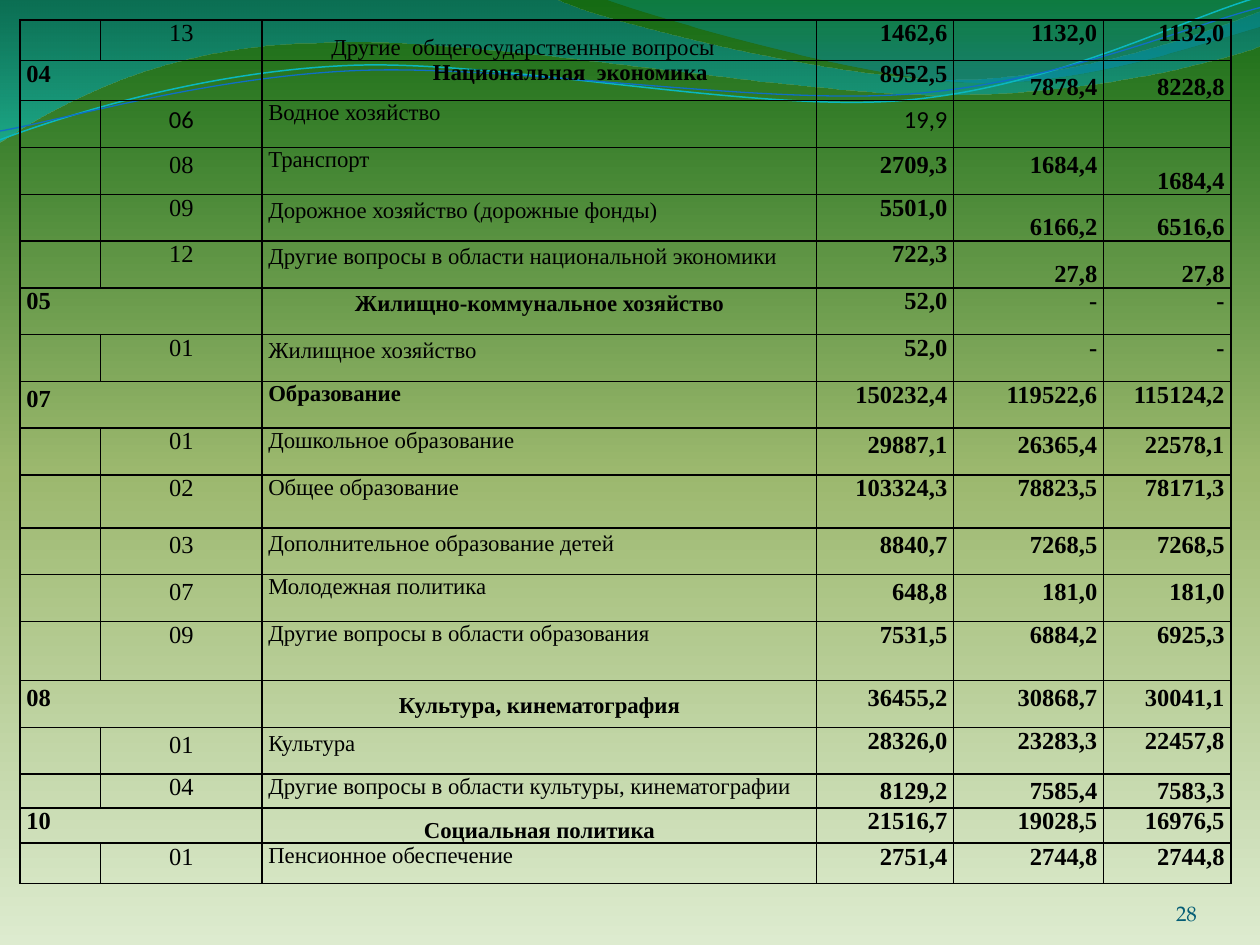
from math import cos, radians, sin

from pptx import Presentation
from pptx.dml.color import RGBColor
from pptx.enum.text import MSO_ANCHOR as ANCHOR, PP_ALIGN as ALIGN
from pptx.oxml import parse_xml
from pptx.oxml.ns import nsdecls, qn
from pptx.util import Inches, Pt

BLACK = RGBColor(0x00, 0x00, 0x00)
PAGE_BLUE = RGBColor(0x04, 0x5D, 0x75)
CYAN = RGBColor(0x0A, 0xB8, 0xBF)
BLUE = RGBColor(0x0F, 0x6F, 0xC6)
PALE_GREEN = RGBColor(0xDD, 0xEB, 0xCF)
MID_GREEN = RGBColor(0x9C, 0xB8, 0x6E)
DARK_GREEN = RGBColor(0x15, 0x6B, 0x13)
DEEP_TEAL = RGBColor(0x00, 0x74, 0xA1)
BRIGHT_TEAL = RGBColor(0x00, 0xC6, 0xCF)
SEA_TEAL = RGBColor(0x00, 0xA1, 0xA9)
SKY_TEAL = RGBColor(0x00, 0x8B, 0xBF)

COLS = [0.64, 1.28, 4.4, 1.09, 1.19, 1.01]
TALL = 2.6 / 7  # seven tall rows take 2.6 inches
ROWS = [0.32] * 2 + [TALL] * 8 + [0.42] + [TALL] * 2 + [0.47, TALL, TALL, 0.25, 0.28, 0.32]

# Paragraph styles, one letter per filled cell in the last field of a row
STYLES = {
    ".": {},
    "w": dict(line=1.15, after=10),
    "b": dict(anchor=ANCHOR.BOTTOM),
    "x": dict(line=1.15, after=10, anchor=ANCHOR.BOTTOM),
    "c": dict(line=1.5, before=6),
    "h": dict(anchor=ANCHOR.BOTTOM, align=ALIGN.LEFT, margin=0.62, indent=-0.12),
    "i": dict(indent=0.49),
}

# Section, subsection, name, three years, styles
BUDGET = [
    ("", "13", "Другие  общегосударственные вопросы", "1462,6", "1132,0", "1132,0", ".h..."),
    ("04", "", "Национальная  экономика", "8952,5", "7878,4", "8228,8", ".i.bb"),
    ("", "06", "Водное хозяйство", "19,9", "", "", "w.w.."),
    ("", "08", "Транспорт", "2709,3", "1684,4", "1684,4", "w.wwx"),
    ("", "09", "Дорожное хозяйство (дорожные фонды)", "5501,0", "6166,2", "6516,6", ".w.bb"),
    ("", "12", "Другие вопросы в области национальной экономики", "722,3", "27,8", "27,8", ".w.bb"),
    ("05", "", "Жилищно-коммунальное хозяйство", "52,0", "-", "-", ".w..."),
    ("", "01", "Жилищное хозяйство", "52,0", "-", "-", ".w..."),
    ("07", "", "Образование", "150232,4", "119522,6", "115124,2", "w...."),
    ("", "01", "Дошкольное образование", "29887,1", "26365,4", "22578,1", "..www"),
    ("", "02", "Общее образование", "103324,3", "78823,5", "78171,3", "....."),
    ("", "03", "Дополнительное образование детей", "8840,7", "7268,5", "7268,5", "wwwww"),
    ("", "07", "Молодежная политика", "648,8", "181,0", "181,0", "w.www"),
    ("", "09", "Другие вопросы в области образования", "7531,5", "6884,2", "6925,3", "....."),
    ("08", "", "Культура, кинематография", "36455,2", "30868,7", "30041,1", "wcwww"),
    ("", "01", "Культура", "28326,0", "23283,3", "22457,8", "ww..."),
    ("", "04", "Другие вопросы в области культуры, кинематографии", "8129,2", "7585,4", "7583,3", "..www"),
    ("10", "", "Социальная политика", "21516,7", "19028,5", "16976,5", ".b..."),
    ("", "01", "Пенсионное обеспечение", "2751,4", "2744,8", "2744,8", "....."),
]

# Waves: a point is a straight step, six numbers are a Bezier step
BAND = [(0, -0.01), (4.4, -0.01), (4.76, 0.17, 6.64, 0.63, 7.58, 0.63),
        (8.53, 0.63, 9.58, 0.26, 10, 0.09), (10.01, 0.36),
        (9.83, 0.44, 8.7, 0.76, 7.46, 0.75), (6.22, 0.75, 3.82, 0.28, 2.57, 0.34),
        (1.29, 0.35, 0.46, 0.83, -0.01, 1.13), (0, -0.01)]
CREST = [(4.79, -0.01), (5.09, 0.11, 6.82, 0.62, 7.69, 0.65),
         (8.56, 0.69, 9.61, 0.32, 10, 0.21), (10, 0), (4.79, -0.01)]
CYAN_CURVE = [(0, 1.11), (0.48, 0.93, 1.58, 0.57, 2.77, 0.52),
              (3.95, 0.47, 5.93, 0.89, 7.13, 0.8), (8.33, 0.71, 9.38, 0.15, 9.98, -0.02)]
BLUE_CURVE = [(0, 1.04), (0.47, 0.96, 1.64, 0.61, 2.83, 0.56),
              (4.03, 0.51, 5.97, 0.83, 7.17, 0.75), (8.36, 0.67, 9.41, 0.21, 10, 0.06)]
TILT = 2.7  # degrees the thin curves lean anticlockwise


def write(tf, text, font="Times New Roman", size=14, bold=False, color=BLACK, align=ALIGN.LEFT,
          line=None, before=0, after=0, margin=0, indent=0):
    p = tf.paragraphs[0]
    p.alignment = align
    p.line_spacing = line
    p.space_before, p.space_after = Pt(before), Pt(after)
    pPr = p._p.get_or_add_pPr()
    pPr.set("marL", str(Inches(margin)))
    pPr.set("indent", str(Inches(indent)))
    r = p.add_run()
    r.text = text
    r.font.name, r.font.size, r.font.bold = font, Pt(size), bold
    r.font.color.rgb = color


def set_gradient(fill, owner, stops, angle):
    """Stops are (position %, colour, opacity %); the angle runs clockwise."""
    fill.gradient()
    grad = owner.find(".//" + qn("a:gradFill"))
    gs_list = grad.find(qn("a:gsLst"))
    for gs in list(gs_list):
        gs_list.remove(gs)
    for pos, color, opacity in stops:
        alpha = f'<a:alpha val="{opacity * 1000}"/>' if opacity < 100 else ""
        gs_list.append(parse_xml(
            f'<a:gs {nsdecls("a")} pos="{pos * 1000}"><a:srgbClr val="{color}">'
            f'{alpha}</a:srgbClr></a:gs>'))
    grad.find(qn("a:lin")).set("ang", str(angle * 60000))


class Page:
    """Current slide; lengths are in columns and rows of a one-inch grid."""

    def __init__(self, prs):
        self.slide = prs.slides.add_slide(prs.slide_layouts[6])
        self.shapes = self.slide.shapes

    def background(self, stops, angle):
        set_gradient(self.slide.background.fill, self.slide.element, stops, angle)

    def wave(self, box, steps, stops=None, line=None, width=0.75, tilt=0):
        left, top, w, h = box
        turn = radians(tilt)

        def local(x, y):
            """Point in the frame of the box before it is tilted."""
            dx, dy = x - left - w / 2, y - top - h / 2
            return (Inches(w / 2 + dx * cos(turn) - dy * sin(turn)),
                    Inches(h / 2 + dx * sin(turn) + dy * cos(turn)))

        builder = self.shapes.build_freeform(0, 0)
        builder.add_line_segments([(Inches(w), Inches(h))], close=bool(stops))
        sp = builder.convert_to_shape()
        sp.left, sp.top, sp.width, sp.height = (Inches(v) for v in box)
        sp.rotation = -tilt

        # Swap the straight outline for the Bezier one
        outline = sp.element.find(".//" + qn("a:path"))
        for old in outline.findall(qn("a:moveTo")) + outline.findall(qn("a:lnTo")):
            outline.remove(old)
        for i, step in enumerate(steps):
            tag = "moveTo" if i == 0 else "lnTo" if len(step) == 2 else "cubicBezTo"
            points = [local(*step[k:k + 2]) for k in range(0, len(step), 2)]
            pts = "".join(f'<a:pt x="{x}" y="{y}"/>' for x, y in points)
            outline.insert(i, parse_xml(f'<a:{tag} {nsdecls("a")}>{pts}</a:{tag}>'))

        sp.shadow.inherit = False
        if stops:
            set_gradient(sp.fill, sp.element, stops, 90)
            sp.line.fill.background()
        else:
            sp.fill.background()
            sp.line.color.rgb, sp.line.width = line, Pt(width)

    def text(self, box, text, **style):
        tf = self.shapes.add_textbox(*(Inches(v) for v in box)).text_frame
        tf.word_wrap = True
        tf.vertical_anchor = ANCHOR.BOTTOM
        tf.margin_left = tf.margin_right = tf.margin_top = tf.margin_bottom = 0
        write(tf, text, **style)

    def cell(self, cell, text, anchor=ANCHOR.TOP, **style):
        cell.margin_left = cell.margin_right = Inches(0.05)
        cell.margin_top = cell.margin_bottom = 0
        cell.vertical_anchor = anchor
        cell.fill.background()
        tcPr = cell._tc.get_or_add_tcPr()
        for i, side in enumerate("LRTB"):
            tcPr.insert(i, parse_xml(
                f'<a:ln{side} {nsdecls("a")} w="{Pt(1)}"><a:solidFill>'
                f'<a:srgbClr val="{BLACK}"/></a:solidFill></a:ln{side}>'))
        if text:
            write(cell.text_frame, text, **style)
        else:  # small type keeps an empty cell from stretching its row
            cell.text_frame.paragraphs[0]._p.append(
                parse_xml(f'<a:endParaRPr {nsdecls("a")} sz="800"/>'))

    def budget_table(self, left, top):
        table = self.shapes.add_table(len(ROWS), len(COLS), Inches(left), Inches(top),
                                      Inches(sum(COLS)), Inches(sum(ROWS))).table
        table.first_row = table.horz_banding = False
        for col, width in zip(table.columns, COLS):
            col.width = Inches(width)
        for row, height in zip(table.rows, ROWS):
            row.height = Inches(height)
        for i, (section, sub, name, *years, marks) in enumerate(BUDGET):
            head = bool(section)
            looks = [STYLES[m] for m in marks]
            font = "Calibri" if sub == "06" else "Times New Roman"
            self.cell(table.cell(i, 0), section, bold=True, **looks[0])
            self.cell(table.cell(i, 1), sub, font=font, align=ALIGN.CENTER, **looks[0])
            if head:
                table.cell(i, 0).merge(table.cell(i, 1))
            centred = head and section != "07"
            name_style = dict(align=ALIGN.CENTER if centred else ALIGN.JUSTIFY) | looks[1]
            self.cell(table.cell(i, 2), name, size=13, bold=head, **name_style)
            for j, (value, look) in enumerate(zip(years, looks[2:]), 3):
                self.cell(table.cell(i, j), value, font=font, bold=sub != "06",
                          align=ALIGN.RIGHT, **look)


def main():
    prs = Presentation()
    prs.slide_width, prs.slide_height = Inches(10), Inches(7.5)
    page = Page(prs)

    # Backdrop
    page.background([(0, PALE_GREEN, 100), (50, MID_GREEN, 100), (100, DARK_GREEN, 100)], 270)
    page.wave((-0.01, -0.01, 10.02, 1.14), BAND, stops=[(0, DEEP_TEAL, 45), (100, BRIGHT_TEAL, 55)])
    page.wave((4.79, -0.01, 5.21, 0.7), CREST, stops=[(0, SEA_TEAL, 30), (80, SKY_TEAL, 45)])
    page.wave((-0.02, 0.22, 10.02, 0.71), CYAN_CURVE, line=CYAN, width=0.85, tilt=TILT)
    page.wave((-0.02, 0.3, 10.03, 0.58), BLUE_CURVE, line=BLUE, tilt=TILT)

    # Page number and budget
    page.text((8.67, 6.95, 0.83, 0.4), "28", font="TeX Gyre Pagella", size=12,
              color=PAGE_BLUE, align=ALIGN.RIGHT)
    page.budget_table(0.16, 0.16)
    prs.save("out.pptx")


if __name__ == "__main__":
    main()
